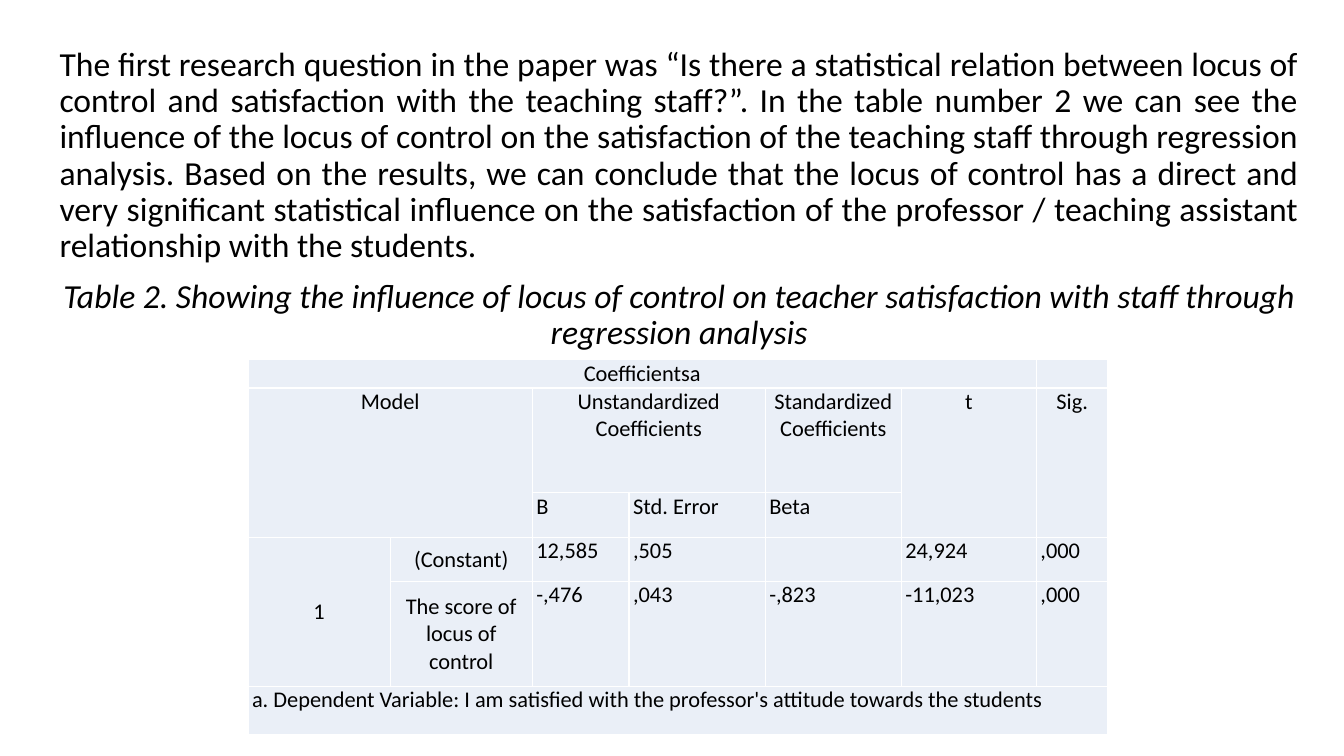
from dataclasses import dataclass
from itertools import product

from lxml.etree import SubElement
from pptx import Presentation
from pptx.dml.color import RGBColor
from pptx.enum.text import MSO_ANCHOR, MSO_AUTO_SIZE, PP_ALIGN
from pptx.oxml.ns import qn
from pptx.util import Inches, Pt


@dataclass(frozen=True)
class Theme:
    """Colours, font and type sizes of the slide."""
    ink: RGBColor = RGBColor(0, 0, 0)
    cell: RGBColor = RGBColor(0xEA, 0xEF, 0xF7)
    rule: str = "FFFFFF"
    font: str = "Calibri"
    body: Pt = Pt(24)
    small: Pt = Pt(16)


THEME = Theme()
SIZE = (Inches(13.33), Inches(7.5))
INTRO = (
    "The first research question in the paper was “Is there a statistical relation "
    "between locus of control and satisfaction with the teaching staff?”. In the table "
    "number 2 we can see the influence of the locus of control on the satisfaction of "
    "the teaching staff through regression analysis. Based on the results, we can "
    "conclude that the locus of control has a direct and very significant statistical "
    "influence on the satisfaction of the professor / teaching assistant relationship "
    "with the students."
)
TITLE = ("Table 2. Showing the influence of locus of control on teacher satisfaction "
         "with staff through regression analysis")
COLS = (1.41, 1.41, 0.96, 1.35, 1.35, 1.34, 0.71)
ROWS = (0.28, 1.04, 0.44, 0.44, 1.04, 0.48)
SPANS = ((0, 0, 0, 5), (1, 0, 2, 1), (1, 2, 1, 3), (1, 5, 2, 5),
         (1, 6, 2, 6), (3, 0, 4, 0), (5, 0, 5, 6))
CELLS = (
    ("Coefficientsa", "", "", "", "", "", ""),
    ("Model", "", "Unstandardized Coefficients", "", "Standardized Coefficients", "t", "Sig."),
    ("", "", "B", "Std. Error", "Beta", "", ""),
    ("1", "(Constant)", "12,585", ",505", "", "24,924", ",000"),
    ("", "The score of locus of control", "-,476", ",043", "-,823", "-11,023", ",000"),
    ("a. Dependent Variable: I am satisfied with the professor's attitude towards the students",
     "", "", "", "", "", ""),
)


def assign(item, **form):
    """Set the attributes of an item from format values."""
    for name, value in form.items():
        setattr(item, name, value)


def write(para, text, size, italic=False):
    """Add a run in the theme's font and ink."""
    run = para.add_run()
    run.text = text
    assign(run.font, name=THEME.font, size=size, italic=italic)
    run.font.color.rgb = THEME.ink


def add_body(slide, box):
    """Fill the body placeholder with the findings and the table's title."""
    body = slide.placeholders[1]
    assign(body, **dict(zip(("left", "top", "width", "height"), box)))
    frame = body.text_frame
    assign(frame, word_wrap=True, auto_size=MSO_AUTO_SIZE.NONE)
    parts = ((INTRO, PP_ALIGN.JUSTIFY, False), (TITLE, PP_ALIGN.CENTER, True))
    for spot, (text, align, italic) in enumerate(parts):
        para = frame.add_paragraph() if spot else frame.paragraphs[0]
        assign(para, alignment=align, line_spacing=0.9, space_before=Pt(10))
        props = para._p.get_or_add_pPr()
        props.set("marL", "0")
        props.set("indent", "0")
        SubElement(props, qn("a:buNone"))
        write(para, text, THEME.body, italic)


def add_rules(cell):
    """Draw the four borders of a cell."""
    props = cell._tc.get_or_add_tcPr()
    for side in ("lnL", "lnR", "lnT", "lnB"):
        line = SubElement(props, qn(f"a:{side}"), w=str(Pt(1)))
        fill = SubElement(line, qn("a:solidFill"))
        SubElement(fill, qn("a:srgbClr"), val=THEME.rule)


def fill_cell(cell, text, center, middle):
    """Format one cell and write its text."""
    assign(cell, margin_left=0, margin_right=0, margin_top=0, margin_bottom=0,
           vertical_anchor=MSO_ANCHOR.MIDDLE if middle else MSO_ANCHOR.TOP)
    add_rules(cell)
    cell.fill.solid()
    cell.fill.fore_color.rgb = THEME.cell
    para = cell.text_frame.paragraphs[0]
    para.alignment = PP_ALIGN.CENTER if center else PP_ALIGN.LEFT
    props = para._p.get_or_add_pPr()
    for side in ("marL", "marR"):
        props.set(side, str(Inches(0.04)))
    if text:
        write(para, text, THEME.small)
    else:
        SubElement(para._p, qn("a:endParaRPr"), sz=str(int(THEME.small.pt * 100)))


def add_grid(slide, box):
    """Place the table of coefficients with its columns and rows in the box."""
    left, top, width, height = box
    table = slide.shapes.add_table(len(ROWS), len(COLS), left, top, width, height).table
    assign(table, first_row=False, horz_banding=False)
    for col, share in zip(table.columns, COLS):
        col.width = int(width * share / sum(COLS))
    for row, share in zip(table.rows, ROWS):
        row.height = int(height * share / sum(ROWS))
    for row, col in product(range(len(ROWS)), range(len(COLS))):
        label = row in (3, 4) and col < 2
        fill_cell(table.cell(row, col), CELLS[row][col], row < 2 or label, label)
    for row, col, last, end in SPANS:
        table.cell(row, col).merge(table.cell(last, end))


def main():
    """Build the slide and save it."""
    deck = Presentation()
    assign(deck, slide_width=SIZE[0], slide_height=SIZE[1])
    slide = deck.slides.add_slide(deck.slide_layouts[1])
    title = slide.shapes.title._element
    title.getparent().remove(title)
    add_body(slide, [Inches(n) for n in (0.49, 0.42, 12.49, 4.76)])
    add_grid(slide, [Inches(n) for n in (2.46, 3.57, sum(COLS), sum(ROWS))])
    deck.save("out.pptx")


if __name__ == "__main__":
    main()
